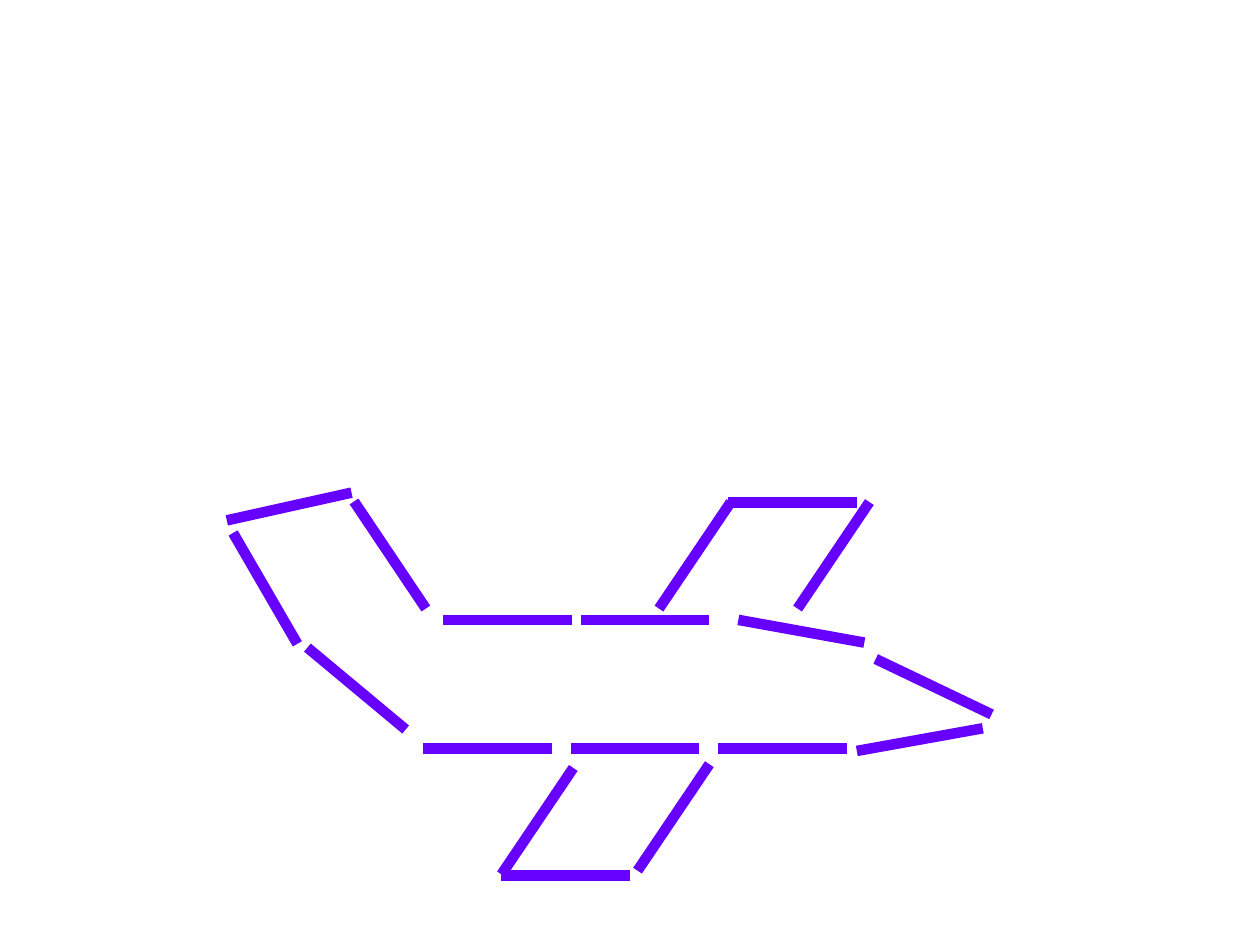
from typing import NamedTuple

import pptx
import pptx.dml.color
import pptx.enum.shapes
import pptx.oxml.ns
import pptx.slide
import pptx.util
from lxml import etree
from pptx.util import Inches

COLORS = {"stick": "6600FF"}
STICK_WIDTH = pptx.util.Pt(6)
STICK_LENGTH = 1.02
TOP_Y, BOTTOM_Y = 4.92, 5.94
WING_TIP_TOP, WING_TIP_BOTTOM = 3.99, 6.95
WING_RUN, WING_RISE = 0.57, 0.845


class Stick(NamedTuple):
    x1: float
    y1: float
    x2: float
    y2: float


def level_stick(left: float, y: float) -> Stick:
    return Stick(left + STICK_LENGTH, y, left, y)


def wing_stick(left: float, bottom: float) -> Stick:
    """Return a wing edge rising to the right from its lower end."""
    return Stick(left, bottom, left + WING_RUN, bottom - WING_RISE)


FUSELAGE = [
    *(level_stick(left, TOP_Y) for left in (3.52, 4.61)),
    Stick(6.86, 5.1, 5.86, 4.92),
    *(level_stick(left, BOTTOM_Y) for left in (5.7, 4.53, 3.36)),
]
NOSE = [Stick(7.87, 5.67, 6.95, 5.23), Stick(7.8, 5.78, 6.8, 5.96)]
TAIL = [
    Stick(3.22, 5.79, 2.44, 5.14),
    Stick(3.38, 4.83, 2.81, 3.98),
    Stick(2.36, 5.11, 1.85, 4.23),
    Stick(2.79, 3.91, 1.8, 4.13),
]
LOWER_WING = [
    wing_stick(5.06, 6.91),
    wing_stick(3.98, 6.94),
    level_stick(3.98, WING_TIP_BOTTOM),
]
UPPER_WING = [
    wing_stick(5.23, 4.83),
    wing_stick(6.33, 4.83),
    level_stick(5.78, WING_TIP_TOP),
]


def draw_stick(slide: pptx.slide.Slide, stick: Stick) -> None:
    connector = slide.shapes.add_connector(
        pptx.enum.shapes.MSO_CONNECTOR.STRAIGHT, *(Inches(value) for value in stick)
    )
    connector.line.width = STICK_WIDTH
    connector.line.color.rgb = pptx.dml.color.RGBColor.from_string(COLORS["stick"])
    properties = connector.element.find(pptx.oxml.ns.qn("p:spPr"))
    etree.SubElement(properties, pptx.oxml.ns.qn("a:effectLst"))


def main() -> None:
    presentation = pptx.Presentation()
    presentation.slide_width = Inches(10)
    presentation.slide_height = Inches(7.5)
    slide = presentation.slides.add_slide(presentation.slide_layouts[6])
    for part in (FUSELAGE, NOSE, TAIL, LOWER_WING, UPPER_WING):
        for stick in part:
            draw_stick(slide, stick)
    presentation.save("out.pptx")


if __name__ == "__main__":
    main()
